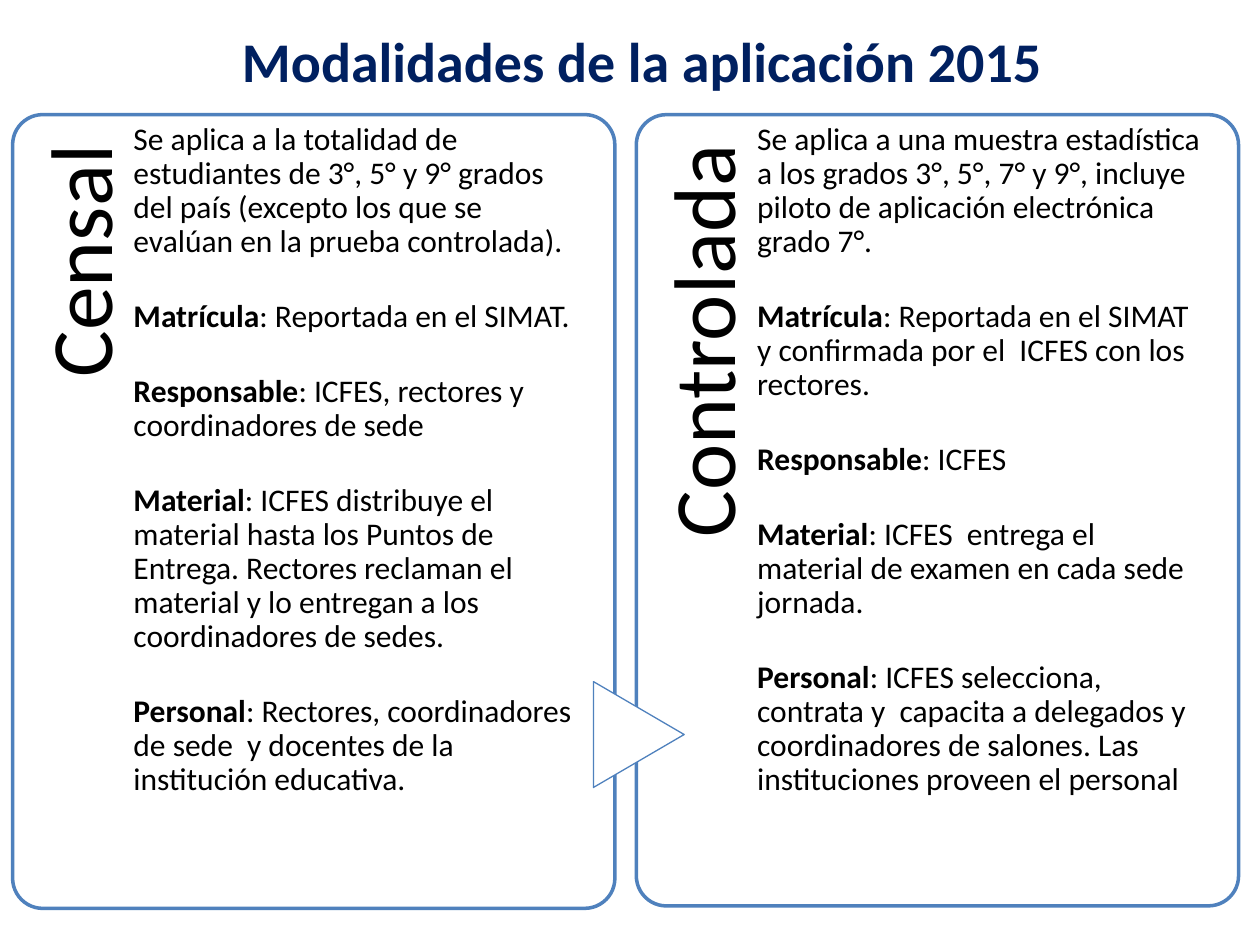
from dataclasses import dataclass

from pptx import Presentation
from pptx.dml.color import RGBColor
from pptx.enum.shapes import MSO_AUTO_SHAPE_TYPE as Shape
from pptx.enum.text import MSO_ANCHOR as Anchor, MSO_AUTO_SIZE as AutoSize, PP_ALIGN as Align
from pptx.util import Inches, Pt

COLS, ROWS = 100, 75  # square grid cells over the whole slide


@dataclass(frozen=True)
class Theme:
    font: str = "Calibri"
    title: RGBColor = RGBColor(0x00, 0x20, 0x60)
    text: RGBColor = RGBColor(0x00, 0x00, 0x00)
    fill: RGBColor = RGBColor(0xFF, 0xFF, 0xFF)
    border: RGBColor = RGBColor(0x4F, 0x81, 0xBD)
    title_size: float = 32
    heading_size: float = 50
    body_size: float = 18
    gap: float = 23.3
    line_spacing: float = 0.9


@dataclass(frozen=True)
class Box:
    """Place on the slide, in grid columns and rows."""
    left: float
    top: float
    width: float
    height: float


@dataclass(frozen=True)
class Item:
    label: str
    text: str


@dataclass(frozen=True)
class Mode:
    name: str
    frame: Box
    intro: str
    items: tuple[Item, ...]


THEME = Theme()
TITLE = "Modalidades de la aplicación 2015"
TITLE_BOX = Box(18.2, 1.6, 66.1, 6.4)
ARROW_BOX = Box(46.5, 54.7, 8.4, 7.2)
HEADING_HEIGHT = 9.6
HEADING_SHARE = 0.82  # of the panel height
BODY_OFFSET, BODY_WIDTH = 9.6, 35.6

CENSUS = Mode(
    "Censal", Box(1, 9.1, 47.8, 63),
    "Se aplica a la totalidad de estudiantes de 3°, 5° y 9° grados del país "
    "(excepto los que se evalúan en la prueba controlada).",
    (Item("Matrícula", ": Reportada en el SIMAT."),
     Item("Responsable", ": ICFES, rectores y coordinadores de sede"),
     Item("Material", ": ICFES distribuye el material hasta los Puntos de Entrega. "
          "Rectores reclaman el material y lo entregan a los coordinadores de sedes."),
     Item("Personal", ": Rectores, coordinadores de sede  y docentes de la "
          "institución educativa.")))
CONTROLLED = Mode(
    "Controlada", Box(50.5, 9.1, 47.8, 62.8),
    "Se aplica a una muestra estadística a los grados 3°, 5°, 7° y 9°, incluye "
    "piloto de aplicación electrónica grado 7°.",
    (Item("Matrícula", ": Reportada en el SIMAT y confirmada por el  ICFES con los rectores."),
     Item("Responsable", ": ICFES"),
     Item("Material", ": ICFES  entrega el material de examen en cada sede jornada."),
     Item("Personal", ": ICFES selecciona, contrata y  capacita a delegados y "
          "coordinadores de salones. Las instituciones proveen el personal")))

prs = Presentation()
prs.slide_width, prs.slide_height = Inches(10), Inches(7.5)


def place(box: Box) -> tuple[int, int, int, int]:
    """Turn grid units into slide lengths."""
    col, row = prs.slide_width / COLS, prs.slide_height / ROWS
    return (round(box.left * col), round(box.top * row),
            round(box.width * col), round(box.height * row))


def set_insets(tf, left: float, top: float, right: float, bottom: float) -> None:
    tf.margin_left, tf.margin_top = Inches(left), Inches(top)
    tf.margin_right, tf.margin_bottom = Inches(right), Inches(bottom)


def add_run(p, text: str, size: float, color: RGBColor = THEME.text, bold: bool = False) -> None:
    r = p.add_run()
    r.text = text
    r.font.name, r.font.size, r.font.bold = THEME.font, Pt(size), bold
    r.font.color.rgb = color


def add_title(slide) -> None:
    sp = slide.shapes.title
    sp.left, sp.top, sp.width, sp.height = place(TITLE_BOX)
    tf = sp.text_frame
    tf.word_wrap, tf.auto_size = False, AutoSize.SHAPE_TO_FIT_TEXT
    tf.vertical_anchor = Anchor.TOP
    set_insets(tf, 0.1, 0.05, 0.1, 0.05)
    p = tf.paragraphs[0]
    p.alignment = Align.LEFT
    add_run(p, TITLE, THEME.title_size, THEME.title, bold=True)


def add_outlined(slide, kind: Shape, box: Box, line: float):
    sp = slide.shapes.add_shape(kind, *place(box))
    sp.shadow.inherit = False
    sp.fill.solid()
    sp.fill.fore_color.rgb = THEME.fill
    sp.line.color.rgb, sp.line.width = THEME.border, Pt(line)
    return sp


def add_frame(slide, mode: Mode) -> None:
    frame = mode.frame
    sp = add_outlined(slide, Shape.ROUNDED_RECTANGLE, frame, 2)
    sp.adjustments[0] = 0.05
    add_heading(slide, mode)


def add_heading(slide, mode: Mode) -> None:
    """Heading that reads upwards along the panel's left edge."""
    frame = mode.frame
    length = frame.height * HEADING_SHARE
    box = Box(frame.left + (HEADING_HEIGHT - length) / 2,
              frame.top + (length - HEADING_HEIGHT) / 2, length, HEADING_HEIGHT)
    sp = slide.shapes.add_textbox(*place(box))
    sp.rotation = 270
    tf = sp.text_frame
    tf.word_wrap = True
    set_insets(tf, 0, 0.19, 0.24, 0)
    p = tf.paragraphs[0]
    p.alignment, p.line_spacing = Align.RIGHT, THEME.line_spacing
    add_run(p, mode.name, THEME.heading_size)


def add_body(slide, mode: Mode) -> None:
    frame = mode.frame
    box = Box(frame.left + BODY_OFFSET, frame.top, BODY_WIDTH, frame.height)
    tf = slide.shapes.add_textbox(*place(box)).text_frame
    tf.word_wrap = True
    set_insets(tf, 0, 0.07, 0, 0)
    add_run(tf.paragraphs[0], mode.intro, THEME.body_size)
    for item in mode.items:
        p = tf.add_paragraph()
        add_run(p, item.label, THEME.body_size, bold=True)
        add_run(p, item.text, THEME.body_size)
    for p in tf.paragraphs:
        p.line_spacing, p.space_after = THEME.line_spacing, Pt(THEME.gap)


def main() -> None:
    slide = prs.slides.add_slide(prs.slide_layouts[5])
    add_title(slide)
    add_frame(slide, CENSUS)
    add_body(slide, CENSUS)
    add_frame(slide, CONTROLLED)
    arrow = add_outlined(slide, Shape.FLOWCHART_EXTRACT, ARROW_BOX, 0.75)
    arrow.rotation = 90
    add_body(slide, CONTROLLED)
    prs.save("out.pptx")


if __name__ == "__main__":
    main()
